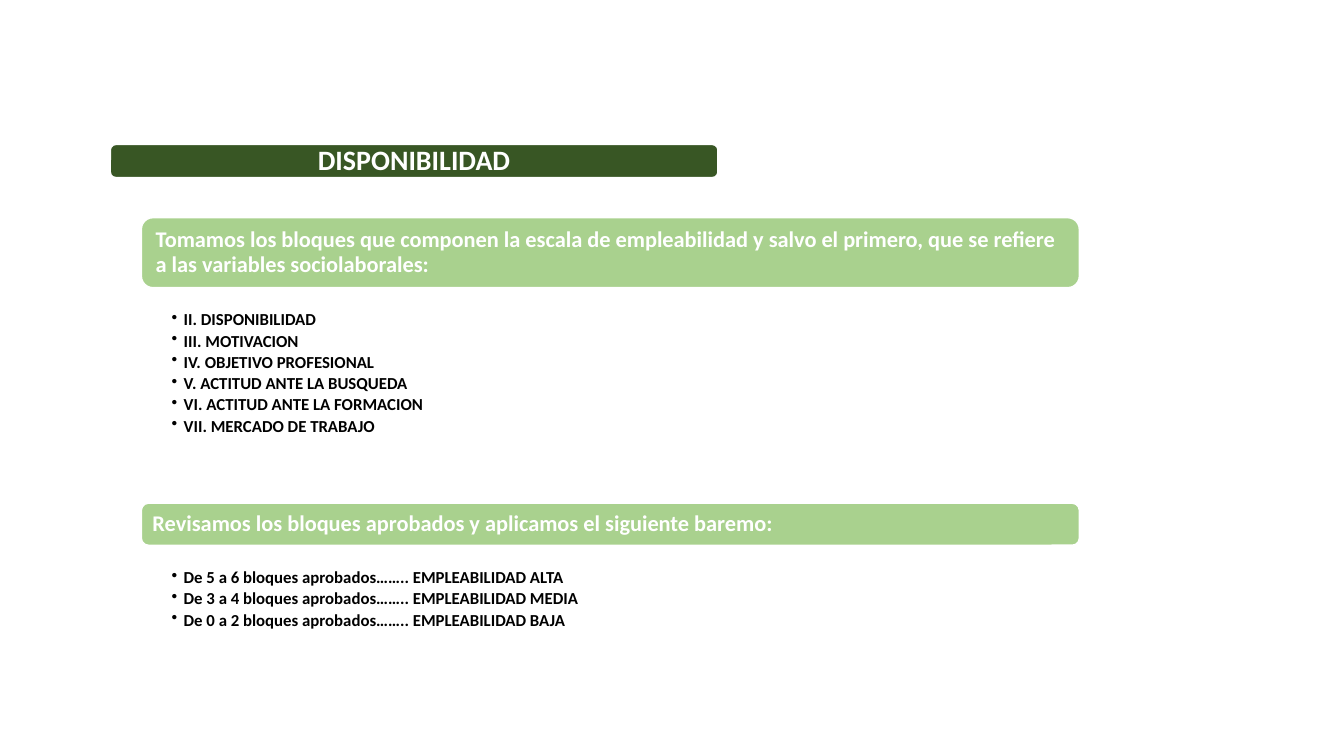
from dataclasses import dataclass

from lxml.etree import SubElement
from pptx import Presentation
from pptx.dml.color import RGBColor
from pptx.enum.shapes import MSO_SHAPE
from pptx.enum.text import MSO_ANCHOR, MSO_AUTO_SIZE, PP_ALIGN
from pptx.oxml.ns import qn
from pptx.util import Pt


@dataclass(frozen=True)
class Theme:
    font: str = "Calibri"
    dark: RGBColor = RGBColor(0x38, 0x56, 0x24)
    light: RGBColor = RGBColor(0xA9, 0xD1, 0x8E)
    white: RGBColor = RGBColor(0xFF, 0xFF, 0xFF)
    black: RGBColor = RGBColor(0, 0, 0)
    title_size: Pt = Pt(20)
    heading_size: Pt = Pt(16)
    item_size: Pt = Pt(12)


theme = Theme()


def add_bar(left, top, width, height, color):
    bar = slide.shapes.add_shape(
        MSO_SHAPE.ROUNDED_RECTANGLE, Pt(left), Pt(top), Pt(width), Pt(height))
    bar.shadow.inherit = False
    bar.fill.solid()
    bar.fill.fore_color.rgb = color
    bar.line.color.rgb = theme.white
    bar.line.width = Pt(1)
    return bar


def write_text(frame, lines, size, color, align, anchor, inset, bullets=False):
    frame_format = {
        "word_wrap": True, "auto_size": MSO_AUTO_SIZE.NONE, "vertical_anchor": anchor,
        "margin_left": Pt(inset), "margin_right": Pt(8),
        "margin_top": 0, "margin_bottom": 0,
    }
    for name, value in frame_format.items():
        setattr(frame, name, value)
    frame.text = "\n".join(lines)
    for paragraph in frame.paragraphs:
        if bullets:
            properties = paragraph._p.get_or_add_pPr()
            properties.set("marL", str(Pt(8.64)))
            properties.set("indent", str(-Pt(8.64)))
            SubElement(properties, qn("a:buChar"), char="•")
        paragraph.alignment = align
        paragraph.line_spacing = 0.9
        paragraph.space_after = Pt(2.2) if bullets else Pt(0)
        for name, value in {"name": theme.font, "size": size, "bold": True}.items():
            setattr(paragraph.font, name, value)
        paragraph.font.color.rgb = color


presentation = Presentation()
presentation.slide_width, presentation.slide_height = Pt(960), Pt(540)
slide = presentation.slides.add_slide(presentation.slide_layouts[5])

# Title on its dark bar
add_bar(78.8, 103.2, 434, 23.6, theme.dark)
title = slide.shapes.title
title_box = {"left": Pt(79.8), "top": Pt(104), "width": Pt(432), "height": Pt(22)}
for name, value in title_box.items():
    setattr(title, name, value)
write_text(title.text_frame, ["DISPONIBILIDAD"], theme.title_size, theme.white,
           PP_ALIGN.CENTER, MSO_ANCHOR.MIDDLE, 8)
title.element.getparent().append(title.element)  # bring in front of the bar

# Sections: heading, bar top, bar height, text inset, items
sections = [
    ("Tomamos los bloques que componen la escala de empleabilidad y salvo el primero, "
     "que se refiere a las variables sociolaborales:", 155.5, 50, 7.8,
     ["II. DISPONIBILIDAD", "III. MOTIVACION", "IV. OBJETIVO PROFESIONAL",
      "V. ACTITUD ANTE LA BUSQUEDA", "VI. ACTITUD ANTE LA FORMACION",
      "VII. MERCADO DE TRABAJO"]),
    ("Revisamos los bloques aprobados y aplicamos el siguiente baremo:", 359.5, 30, 6.5,
     [f"De {blocks} bloques aprobados…….. EMPLEABILIDAD {level}"
      for blocks, level in [("5 a 6", "ALTA"), ("3 a 4", "MEDIA"), ("0 a 2", "BAJA")]]),
]
section_left, section_width = 101, 670
list_gap, item_pitch = 17, 15.4

for heading, top, height, inset, items in sections:
    heading_bar = add_bar(section_left, top, section_width, height, theme.light)
    write_text(heading_bar.text_frame, [heading], theme.heading_size, theme.white,
               PP_ALIGN.LEFT, MSO_ANCHOR.MIDDLE, inset)
    item_list = slide.shapes.add_textbox(
        Pt(section_left), Pt(top + height + list_gap),
        Pt(section_width), Pt(item_pitch * len(items)))
    write_text(item_list.text_frame, items, theme.item_size, theme.black,
               PP_ALIGN.LEFT, MSO_ANCHOR.TOP, 21.6, bullets=True)

presentation.save("out.pptx")
